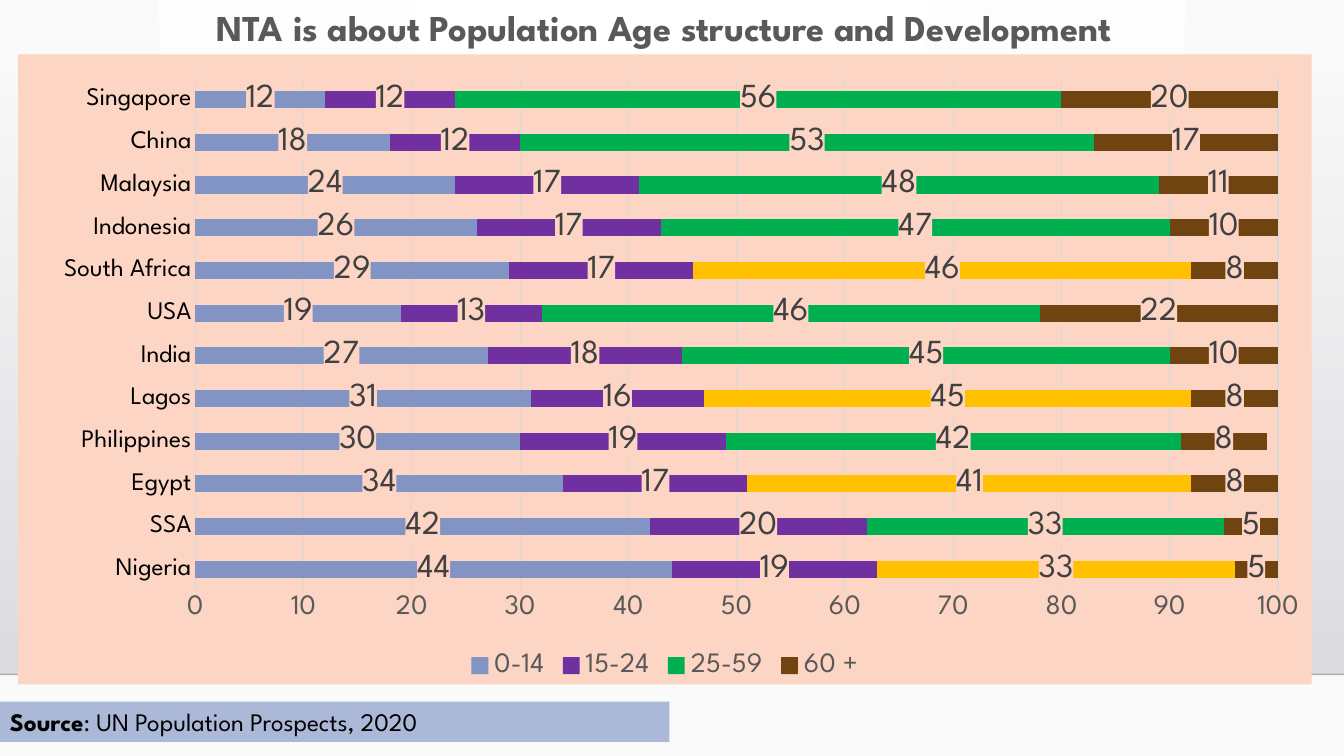
from dataclasses import dataclass

from lxml import etree
from pptx import Presentation
from pptx import util as u
from pptx.chart.data import CategoryChartData
from pptx.dml.color import RGBColor
from pptx.enum import chart as ch
from pptx.enum import shapes, text
from pptx.oxml import parse_xml
from pptx.oxml.ns import nsdecls, qn

FONT = "League Spartan"
COLORS = {
    "white": "FFFFFF", "paper": "FAFAFA", "floor_top": "DCDCE0", "floor_end": "DEDEE2",
    "edge": "000001", "black": "000000", "grey": "595959", "label": "404040",
    "grid": "D9D9D9", "panel": "FCD5C4", "source": "ABB8D7", "highlight": "FFC000",
    "children": "8294C3", "youth": "7030A0", "adults": "00B050", "elderly": "704410",
}


@dataclass
class AgeGroup:
    name: str
    color: str
    values: tuple[int, ...]
    highlighted: tuple[int, ...] = ()


@dataclass
class Run:
    text: str
    size: int
    color: str
    bold: bool = False


COUNTRIES = ("Nigeria", "SSA", "Egypt", "Philippines", "Lagos", "India", "USA",
             "South Africa", "Indonesia", "Malaysia", "China", "Singapore")
AGE_GROUPS = (
    AgeGroup("0-14", "children", (44, 42, 34, 30, 31, 27, 19, 29, 26, 24, 18, 12)),
    AgeGroup("15-24", "youth", (19, 20, 17, 19, 16, 18, 13, 17, 17, 17, 12, 12)),
    AgeGroup("25-59", "adults", (33, 33, 41, 42, 45, 45, 46, 46, 47, 48, 53, 56), (0, 2, 4, 7)),
    AgeGroup("60 +", "elderly", (5, 5, 8, 8, 8, 10, 22, 8, 10, 11, 17, 20)),
)
TITLE = (Run("NTA is about Population Age structure and Development", 26, "grey", True),)
SOURCE = (Run("Source", 18, "black", True), Run(": UN Population Prospects, 2020", 18, "black"))


def rgb(name: str) -> RGBColor:
    return RGBColor.from_string(COLORS[name])


def style_font(font, size: int, color: str, bold: bool = False) -> None:
    font.name = FONT
    font.size = u.Pt(size)
    font.bold = bold
    font.color.rgb = rgb(color)


def write(sp, runs: tuple[Run, ...], align) -> None:
    tf = sp.text_frame
    tf.word_wrap = True
    tf.auto_size = text.MSO_AUTO_SIZE.NONE
    tf.vertical_anchor = text.MSO_ANCHOR.MIDDLE
    p = tf.paragraphs[0]
    p.alignment = align
    for run in runs:
        r = p.add_run()
        r.text = run.text
        style_font(r.font, run.size, run.color, run.bold)


def set_gradient(fill, *names: str) -> None:
    fill.gradient()
    for stop, name in zip(fill.gradient_stops, names):
        stop.color.rgb = rgb(name)


def set_alpha(parent, percent: int) -> None:
    color = next(parent.iter(qn("a:srgbClr")))
    etree.SubElement(color, qn("a:alpha")).set("val", str(percent * 1000))


def add_rectangle(s, left: float, top: float, width: float, height: float):
    sp = s.shapes.add_shape(shapes.MSO_SHAPE.RECTANGLE, u.Inches(left), u.Inches(top),
                            u.Inches(width), u.Inches(height))
    sp.shadow.inherit = False
    sp.line.fill.background()
    return sp


def add_background(s) -> None:
    fill = s.background.fill
    set_gradient(fill, "white", "paper")
    grad = next(s._element.iter(qn("a:gradFill")))
    grad.replace(grad.find(qn("a:lin")), parse_xml(
        f'<a:path {nsdecls("a")} path="circle">'
        '<a:fillToRect l="43000" r="43000" b="100000"/></a:path>'))

    floor = add_rectangle(s, 0, 0.51, 13.33, 6.18)
    set_gradient(floor.fill, "floor_top", "floor_end")
    floor.fill.gradient_angle = 270
    set_alpha(floor._element.spPr, 0)

    edge = s.shapes.add_connector(shapes.MSO_CONNECTOR.STRAIGHT, 0, u.Inches(6.69),
                                  u.Inches(13.33), u.Inches(6.69))
    edge.line.color.rgb = rgb("edge")
    edge.line.width = u.Pt(1)
    set_alpha(edge._element.spPr, 20)
    etree.SubElement(edge._element.spPr, qn("a:effectLst"))


def fill_panel(parent) -> None:
    parent.find(qn("c:txPr")).addprevious(parse_xml(
        f'<c:spPr {nsdecls("c", "a")}><a:solidFill><a:srgbClr val="{COLORS["panel"]}"/>'
        '</a:solidFill><a:ln><a:noFill/></a:ln></c:spPr>'))


def place_plot(chart, x: float, y: float, w: float, h: float) -> None:
    area = next(chart._chartSpace.iter(qn("c:plotArea")))
    for old in area.findall(qn("c:layout")):
        area.remove(old)
    sizes = "".join(f'<c:{key} val="{val}"/>' for key, val in zip("xywh", (x, y, w, h)))
    area.insert(0, parse_xml(
        f'<c:layout {nsdecls("c")}><c:manualLayout><c:layoutTarget val="inner"/>'
        f'<c:xMode val="edge"/><c:yMode val="edge"/>{sizes}</c:manualLayout></c:layout>'))


def style_series(series, group: AgeGroup) -> None:
    series.format.fill.solid()
    series.format.fill.fore_color.rgb = rgb(group.color)
    series.invert_if_negative = False
    for i in group.highlighted:
        fill = series.points[i].format.fill
        fill.solid()
        fill.fore_color.rgb = rgb("highlight")
    labels = series.data_labels
    labels.show_value = True
    labels.number_format = "0"
    labels.number_format_is_linked = False
    style_font(labels.font, 24, "label")
    fill_panel(labels._element)


def style_axes(chart) -> None:
    for axis, size, color in ((chart.category_axis, 18, "black"), (chart.value_axis, 20, "grey")):
        axis.major_tick_mark = axis.minor_tick_mark = ch.XL_TICK_MARK.NONE
        style_font(axis.tick_labels.font, size, color)
    values = chart.value_axis
    values.minimum_scale, values.maximum_scale, values.major_unit = 0, 100, 10
    values.tick_labels.number_format = "0"
    values.tick_labels.number_format_is_linked = False
    values.format.line.fill.background()
    values.has_major_gridlines = True
    for line in (chart.category_axis.format.line, values.major_gridlines.format.line):
        line.color.rgb = rgb("grid")
        line.width = u.Pt(0.75)


def add_age_chart(s) -> None:
    data = CategoryChartData(number_format="0")
    data.categories = COUNTRIES
    for group in AGE_GROUPS:
        data.add_series(group.name, group.values)
    chart = s.shapes.add_chart(ch.XL_CHART_TYPE.BAR_STACKED, u.Inches(0.18), u.Inches(0.54),
                               u.Inches(12.83), u.Inches(6.25), data).chart
    style_font(chart.font, 20, "black")
    fill_panel(chart._chartSpace)
    chart.has_title = False
    chart.has_legend = True
    chart.legend.position = ch.XL_LEGEND_POSITION.BOTTOM
    chart.legend.include_in_layout = False
    style_font(chart.legend.font, 20, "grey")
    plot = chart.plots[0]
    plot.gap_width, plot.overlap = 150, 100
    plot.vary_by_categories = False
    for series, group in zip(plot.series, AGE_GROUPS):
        style_series(series, group)
    style_axes(chart)
    place_plot(chart, 0.137, 0.038, 0.837, 0.813)


def main() -> None:
    prs = Presentation()
    prs.slide_width, prs.slide_height = u.Inches(13.33), u.Inches(7.5)
    s = prs.slides.add_slide(prs.slide_layouts[5])
    add_background(s)
    add_age_chart(s)

    title = s.shapes.title
    title.left, title.top = u.Inches(-0.14), u.Inches(0)
    title.width, title.height = u.Inches(13.47), u.Inches(0.54)
    write(title, TITLE, text.PP_ALIGN.CENTER)
    s.shapes._spTree.append(title._element)

    source = add_rectangle(s, 0, 6.96, 6.64, 0.4)
    source.fill.solid()
    source.fill.fore_color.rgb = rgb("source")
    write(source, SOURCE, text.PP_ALIGN.LEFT)
    prs.save("out.pptx")


if __name__ == "__main__":
    main()
